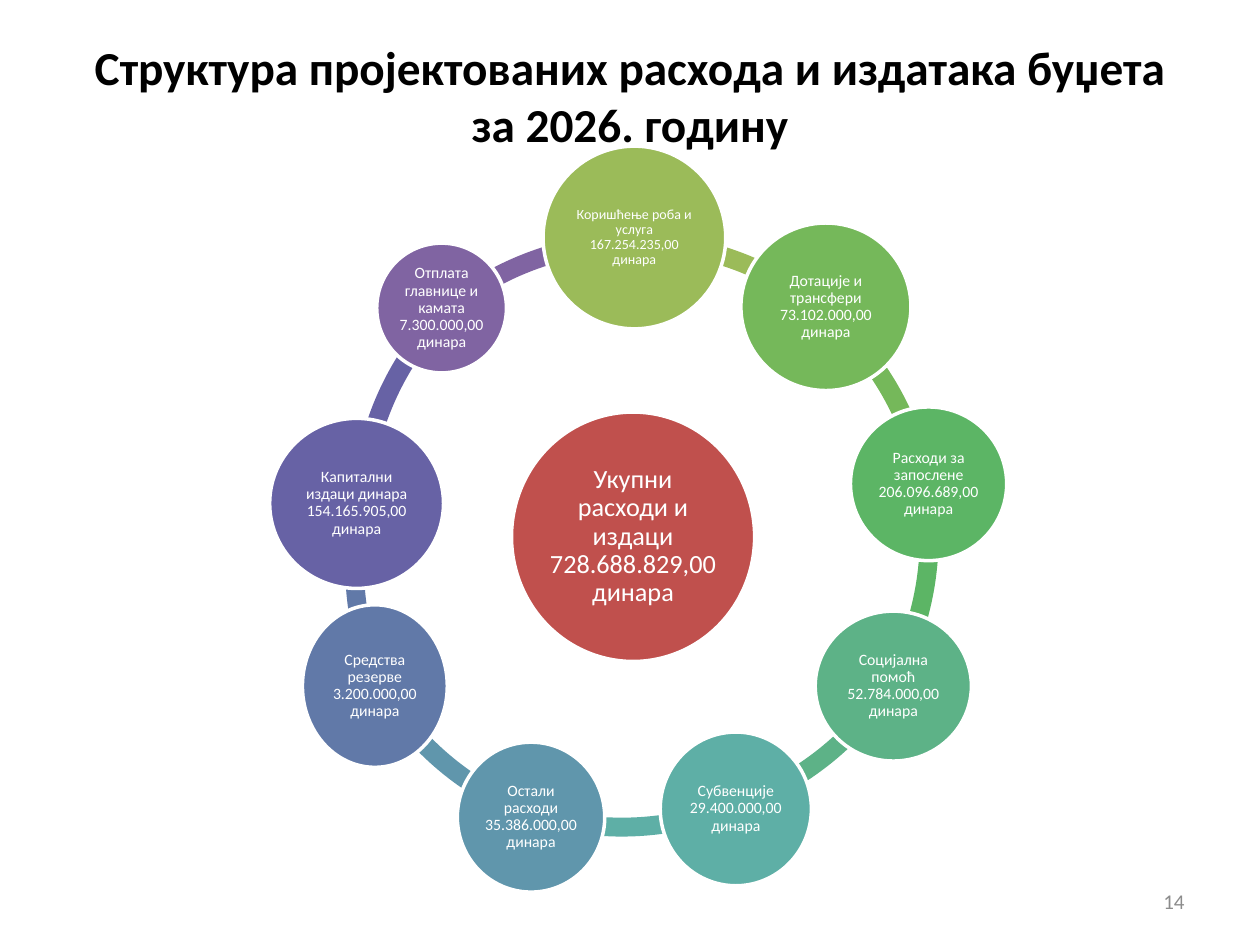
from dataclasses import dataclass

from pptx import Presentation
from pptx.dml.color import RGBColor
from pptx.enum.shapes import MSO_SHAPE as Shape
from pptx.enum.text import MSO_ANCHOR as Anchor, MSO_AUTO_SIZE as AutoSize, PP_ALIGN as Align
from pptx.util import Inches, Pt


@dataclass(frozen=True)
class Theme:
    font: str = "Calibri"
    ink: str = "000000"
    paper: str = "FFFFFF"
    muted: str = "8C8C8C"
    total: str = "C0504D"
    title_size: int = 27
    total_size: int = 15
    item_size: int = 9
    small_size: int = 8
    number_size: int = 12
    outline: int = 2


THEME = Theme()
CELL = Inches(0.1)  # square grid of 100 columns by 75 rows
COLUMNS, ROWS = 100, 75

# Block-arc angles are in units of 1/216 of a turn; nine items share the ring.
TURN, TOP = 216, 162
RING_SIZE, RING_THICKNESS = 48.3, 0.031
RING_CORNER = (26.2, 18.5)

TOTAL = ("Укупни расходи и издаци 728.688.829,00 динара", (40.6, 32.7, 19.3, 19.8))

# Clockwise from the top: text, circle on the grid, colour
ITEMS = [
    ("Коришћење роба и услуга 167.254.235,00 динара", (43.1, 11.6, 14.5, 14.5), "9BBB59"),
    ("Дотације и трансфери 73.102.000,00 динара", (58.8, 17.7, 13.5, 13.3), "75B85A"),
    ("Расходи за запослене 206.096.689,00 динара", (67.5, 32.3, 12.4, 12.2), "5CB565"),
    ("Социјална помоћ 52.784.000,00 динара", (64.7, 48.5, 12.4, 11.9), "5DB287"),
    ("Субвенције 29.400.000,00 динара", (52.4, 58.1, 12, 12.2), "5EAFA6"),
    ("Остали расходи 35.386.000,00 динара", (36.3, 58.9, 11.7, 11.9), "6096AC"),
    ("Средства резерве 3.200.000,00 динара", (24, 48, 11.5, 12.9), "6179A8"),
    ("Капитални издаци динара 154.165.905,00 динара", (21.4, 33.2, 13.8, 13.5), "6762A5"),
    ("Отплата главнице и камата 7.300.000,00 динара", (29.9, 19.3, 10.3, 10.3), "8064A2"),
]

# Links bent to reach circles moved off the ring: item index -> corner, start, end
MOVED_LINKS = {
    3: ((26.7, 17.6), 19.47, 42.83),
    4: ((25.2, 18.1), 40.56, 64.56),
    6: ((27.4, 20.8), 93.85, 115.28),
    7: ((27.9, 16.9), 109.51, 134.63),
}


def on_grid(box):
    return [round(cells * CELL) for cells in box]


def write(sp, text, size, color, align=Align.CENTER, bold=False):
    tf = sp.text_frame
    tf.word_wrap = True
    tf.auto_size = AutoSize.NONE
    tf.vertical_anchor = Anchor.MIDDLE
    p = tf.paragraphs[0]
    p.alignment = align
    r = p.add_run()
    r.text = text
    r.font.name = THEME.font
    r.font.size = Pt(size)
    r.font.bold = bold
    r.font.color.rgb = RGBColor.from_string(color)
    return p


def add_filled(s, kind, box, color):
    sp = s.shapes.add_shape(kind, *on_grid(box))
    sp.shadow.inherit = False
    sp.fill.solid()
    sp.fill.fore_color.rgb = RGBColor.from_string(color)
    sp.line.fill.background()
    return sp


def add_link(s, index, color):
    """Draw the arc from one item to the next one clockwise."""
    step = TURN / len(ITEMS)
    start = (TOP + index * step) % TURN
    corner, start, end = MOVED_LINKS.get(
        index, (RING_CORNER, start, (start + step) % TURN))
    arc = add_filled(s, Shape.BLOCK_ARC, (*corner, RING_SIZE, RING_SIZE), color)
    for i, value in enumerate((start, end, RING_THICKNESS)):
        arc.adjustments[i] = value


def add_circle(s, text, box, color, size, inset):
    sp = add_filled(s, Shape.OVAL, box, color)
    sp.line.color.rgb = RGBColor.from_string(THEME.paper)
    sp.line.width = Pt(THEME.outline)
    tf = sp.text_frame
    tf.margin_left = tf.margin_top = tf.margin_right = tf.margin_bottom = Inches(inset)
    write(sp, text, size, THEME.paper).line_spacing = 0.9


def add_title(s, text, box):
    title = s.shapes.title
    title.left, title.top, title.width, title.height = on_grid(box)
    write(title, text, THEME.title_size, THEME.ink, bold=True)


def add_page_number(s, number, box):
    sp = s.shapes.add_textbox(*on_grid(box))
    write(sp, str(number), THEME.number_size, THEME.muted, Align.RIGHT)


def main():
    prs = Presentation()
    prs.slide_width, prs.slide_height = COLUMNS * CELL, ROWS * CELL
    s = prs.slides.add_slide(prs.slide_layouts[5])

    add_title(s, "Структура пројектованих расхода и издатака буџета за 2026. годину",
              (5, 2.9, 90, 9.3))
    for index, (_, _, color) in reversed(list(enumerate(ITEMS))):
        add_link(s, index, color)
    add_circle(s, *TOTAL, THEME.total, THEME.total_size, inset=0.02)
    for index, item in enumerate(ITEMS):
        size = THEME.item_size if index else THEME.small_size
        add_circle(s, *item, size, inset=0.01)
    add_page_number(s, 14, (71.7, 69.5, 23.3, 4))

    prs.save("out.pptx")


if __name__ == "__main__":
    main()
